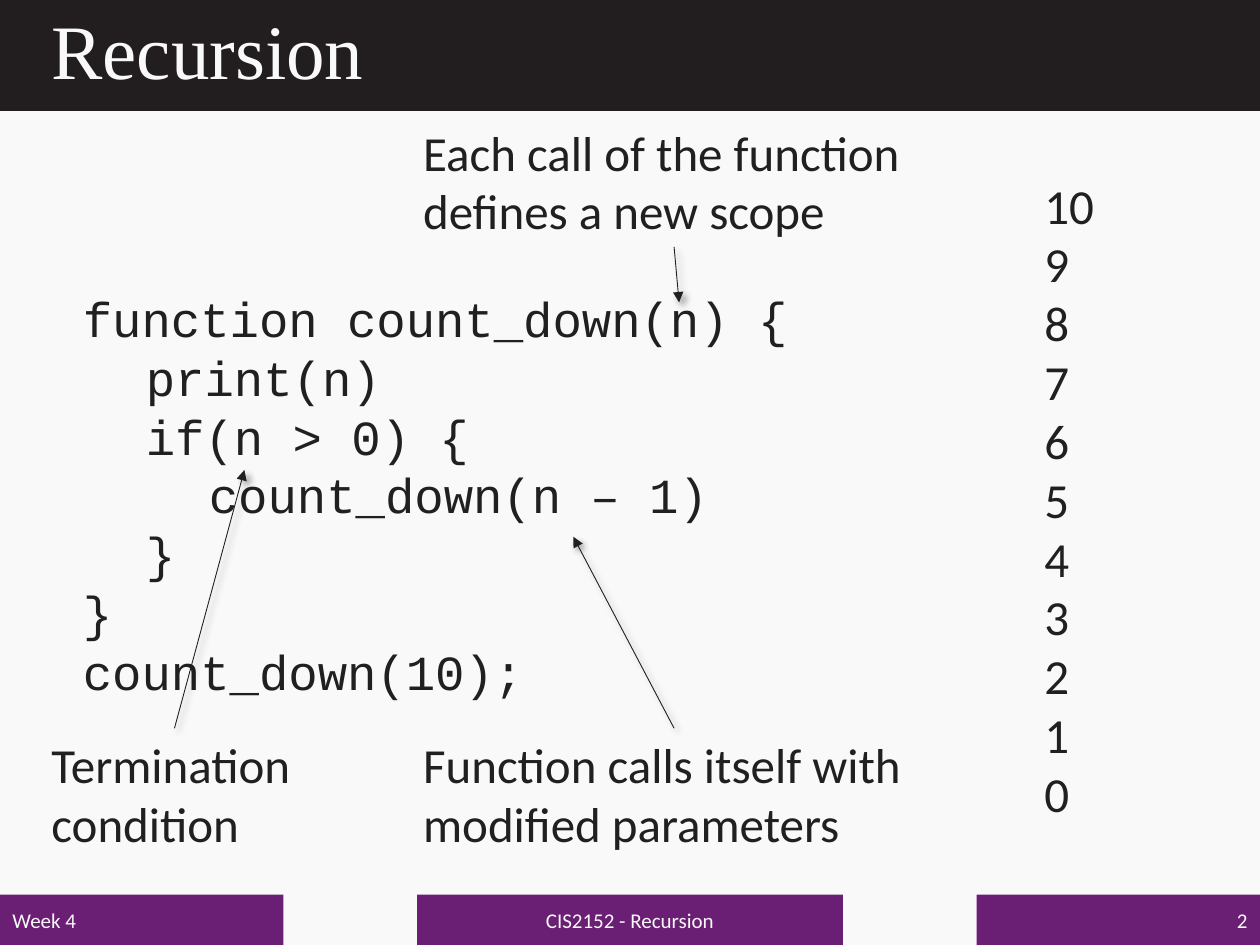
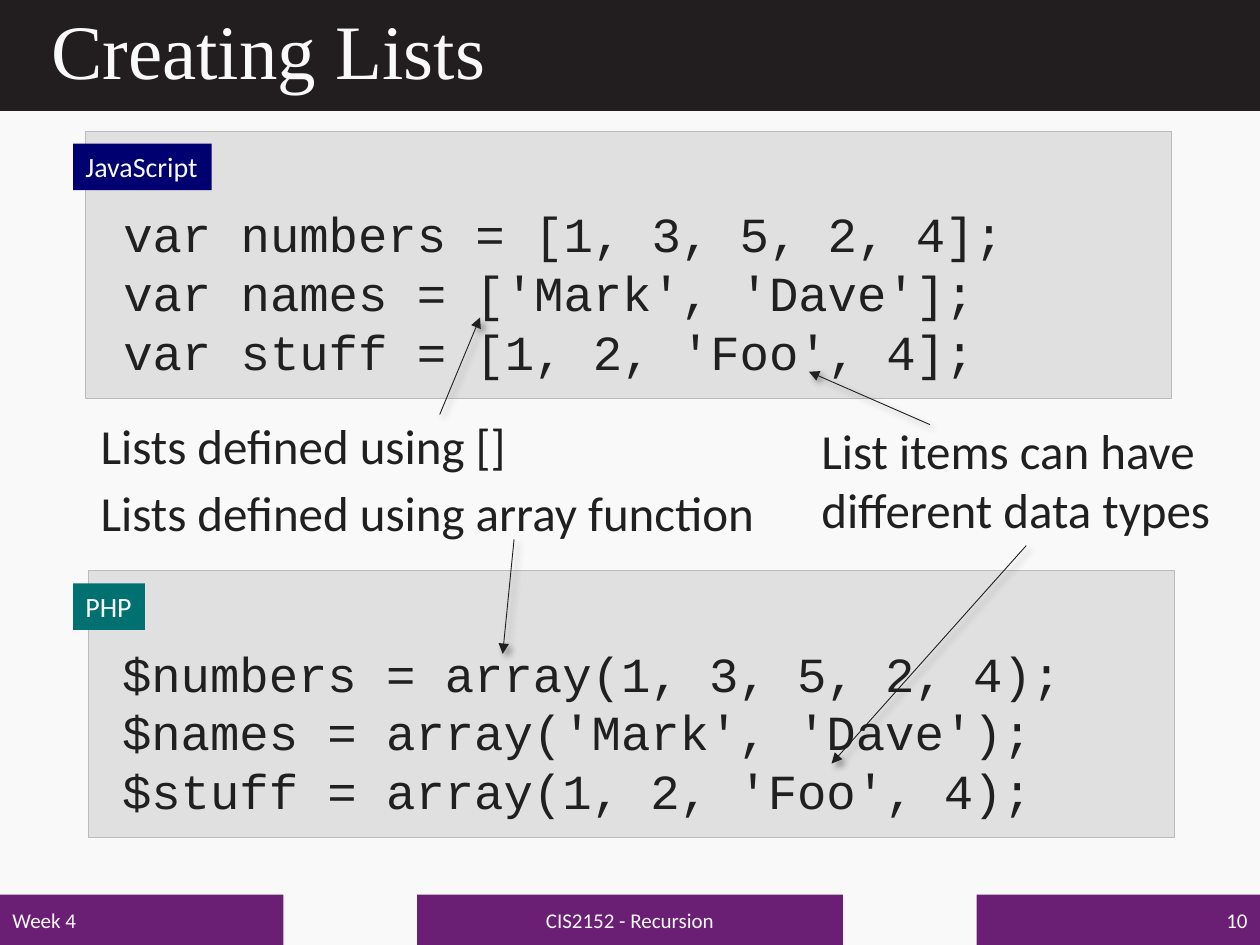
import pptx
import pptx.util
import pptx.dml.color
import pptx.enum.shapes
import pptx.enum.text
import pptx.oxml
import pptx.oxml.ns

RGBColor = pptx.dml.color.RGBColor
PAPER = RGBColor(0xF9, 0xF9, 0xF9)
INK = RGBColor(0x20, 0x20, 0x20)
HEADER = RGBColor(0x22, 0x1E, 0x1F)
PURPLE = RGBColor(0x6A, 0x1F, 0x74)
PANEL = RGBColor(0xE0, 0xE0, 0xE0)
PANEL_EDGE = RGBColor(0xBB, 0xBB, 0xBB)
NAVY = RGBColor(0x00, 0x00, 0x70)
TEAL = RGBColor(0x00, 0x70, 0x70)

TOP = pptx.enum.text.MSO_ANCHOR.TOP
MIDDLE = pptx.enum.text.MSO_ANCHOR.MIDDLE
GROW = pptx.enum.text.MSO_AUTO_SIZE.SHAPE_TO_FIT_TEXT
FIXED = pptx.enum.text.MSO_AUTO_SIZE.NONE
ALIGN = pptx.enum.text.PP_ALIGN
RECTANGLE = pptx.enum.shapes.MSO_SHAPE.RECTANGLE
STRAIGHT = pptx.enum.shapes.MSO_CONNECTOR.STRAIGHT

deck = pptx.Presentation()
deck.slide_width = pptx.util.Inches(10)
deck.slide_height = pptx.util.Inches(7.5)
COLUMN = deck.slide_width / 100
ROW = deck.slide_height / 75

FORMATS = {
    "title": {
        "font": {"name": "Times New Roman", "size": pptx.util.Pt(44)},
        "frame": {"word_wrap": True, "vertical_anchor": MIDDLE, "auto_size": FIXED},
        "para": {"alignment": ALIGN.LEFT, "line_spacing": 0.9},
        "color": PAPER,
    },
    "footer": {
        "font": {"name": "Calibri", "size": pptx.util.Pt(12)},
        "frame": {"word_wrap": True, "vertical_anchor": MIDDLE, "auto_size": FIXED},
        "para": {},
        "color": PAPER,
    },
    "label": {
        "font": {"name": "Calibri", "size": pptx.util.Pt(16)},
        "frame": {"word_wrap": False, "vertical_anchor": TOP, "auto_size": GROW},
        "para": {"alignment": ALIGN.LEFT},
        "color": PAPER,
    },
    "code": {
        "font": {"name": "Courier New", "size": pptx.util.Pt(28)},
        "frame": {"word_wrap": False, "vertical_anchor": TOP, "auto_size": GROW},
        "para": {"alignment": ALIGN.LEFT},
        "color": INK,
    },
    "line": {
        "font": {"name": "Calibri", "size": pptx.util.Pt(28)},
        "frame": {"word_wrap": False, "vertical_anchor": TOP, "auto_size": GROW},
        "para": {"alignment": ALIGN.LEFT},
        "color": INK,
    },
}
FORMATS["note"] = {**FORMATS["line"], "frame": {**FORMATS["line"]["frame"], "word_wrap": True}}

HEAD = '<a:tailEnd %s type="triangle"/>' % pptx.oxml.ns.nsdecls("a")
SHADOW = (
    '<a:effectLst %s><a:outerShdw blurRad="50800" dist="38100" dir="2700000" algn="tl" rotWithShape="0">'
    '<a:srgbClr val="000000"><a:alpha val="40000"/></a:srgbClr></a:outerShdw></a:effectLst>'
) % pptx.oxml.ns.nsdecls("a")


def add_box(page, area, text="", kind="note", fill=None, edge=None, **para_format):
    left, top, width, height = area
    place = [round(n) for n in (left * COLUMN, top * ROW, width * COLUMN, height * ROW)]
    if fill is None:
        box = page.shapes.add_textbox(*place)
    else:
        box = page.shapes.add_shape(RECTANGLE, *place)
        box.shadow.inherit = False
        box.fill.solid()
        box.fill.fore_color.rgb = fill
        if edge is None:
            box.line.fill.background()
        else:
            box.line.color.rgb = edge
            box.line.width = pptx.util.Pt(0.5)
    if not text:
        return box
    style = FORMATS[kind]
    for name, value in style["frame"].items():
        setattr(box.text_frame, name, value)
    for index, words in enumerate(text.split("\n")):
        para = box.text_frame.add_paragraph() if index else box.text_frame.paragraphs[0]
        for name, value in {**style["para"], **para_format}.items():
            setattr(para, name, value)
        span = para.add_run()
        span.text = words
        for name, value in style["font"].items():
            setattr(span.font, name, value)
        span.font.color.rgb = style["color"]
    return box


def add_arrow(page, start, end, note=None, side=None):
    ends = [round(n) for x, y in (start, end) for n in (x * COLUMN, y * ROW)]
    arrow = page.shapes.add_connector(STRAIGHT, *ends)
    if note is not None:
        arrow.begin_connect(note, side)
    arrow.line.color.rgb = INK
    arrow.line.width = pptx.util.Pt(0.5)
    arrow.line._get_or_add_ln().append(pptx.oxml.parse_xml(HEAD))
    arrow._element.spPr.append(pptx.oxml.parse_xml(SHADOW))


pages = []
for title, number in (("Recursion", "2"), ("Creating Lists", "10")):
    page = deck.slides.add_slide(deck.slide_layouts[6])
    page.background.fill.solid()
    page.background.fill.fore_color.rgb = PAPER
    add_box(page, (0, 0, 100, 8.8), fill=HEADER)
    add_box(page, (3.1, 0, 93.9, 8.6), title, "title")
    for left, width, words, alignment in (
        (0, 22.5, "Week 4", ALIGN.LEFT),
        (33.1, 33.8, "CIS2152 - Recursion", ALIGN.CENTER),
        (77.5, 22.5, number, ALIGN.RIGHT),
    ):
        add_box(page, (left, 71, width, 4), words, "footer", PURPLE, alignment=alignment)
    pages.append(page)
recursion, lists = pages

COUNT_DOWN = """function count_down(n) {
\tprint(n)
\tif(n > 0) {
\t\tcount_down(n – 1)
\t}
}
count_down(10);"""
add_box(recursion, (5.6, 22.4, 62.1, 34), COUNT_DOWN, "code")
countdown = "\n".join(str(n) for n in range(10, -1, -1))
add_box(recursion, (81.9, 13.4, 6, 52.8), countdown, "line")

for area, words, side, start, end in (
    ((32.6, 57.8, 41.8, 10.4), "Function calls itself with modified parameters", 0, (53.5, 57.8), (45.5, 42.6)),
    ((32.6, 9.2, 41.8, 10.4), "Each call of the function defines a new scope", 2, (53.5, 19.6), (53.9, 24)),
    ((3.1, 57.8, 21.5, 10.4), "Termination condition", 0, (13.8, 57.8), (19.4, 37.3)),
):
    note = add_box(recursion, area, words)
    add_arrow(recursion, start, end, note, side)

JAVASCRIPT = """var numbers = [1, 3, 5, 2, 4];
var names = ['Mark', 'Dave'];
var stuff = [1, 2, 'Foo', 4];"""
PHP = """$numbers = array(1, 3, 5, 2, 4);
$names = array('Mark', 'Dave');
$stuff = array(1, 2, 'Foo', 4);"""
for language, color, label_width, left, top, code_left, code_width, code in (
    ("JavaScript", NAVY, 11, 6.8, 10.4, 8.8, 72.5, JAVASCRIPT),
    ("PHP", TEAL, 5.7, 7, 45.3, 8.7, 77.2, PHP),
):
    add_box(lists, (left, top, 86.2, 21.2), fill=PANEL, edge=PANEL_EDGE)
    add_box(lists, (code_left, top + 5.25, code_width, 15.1), code, "code")
    add_box(lists, (5.8, top + 1, label_width, 3.7), language, "label", color)

add_box(lists, (7, 32.5, 34.6, 5.7), "Lists defined using []", "line")
add_box(lists, (7, 37.8, 54.5, 5.7), "Lists defined using array function", "line")
types_note = add_box(lists, (64.2, 32.9, 34.5, 10.4), "List items can have different data types")
for start, end in (
    ((34.9, 32.9), (38.1, 25.2)),
    ((40.8, 42.8), (39.9, 51.9)),
    ((73.8, 33.7), (64.2, 29.5)),
):
    add_arrow(lists, start, end)
add_arrow(lists, (81.4, 43.3), (66, 60.6), types_note, 2)

deck.save("out.pptx")
